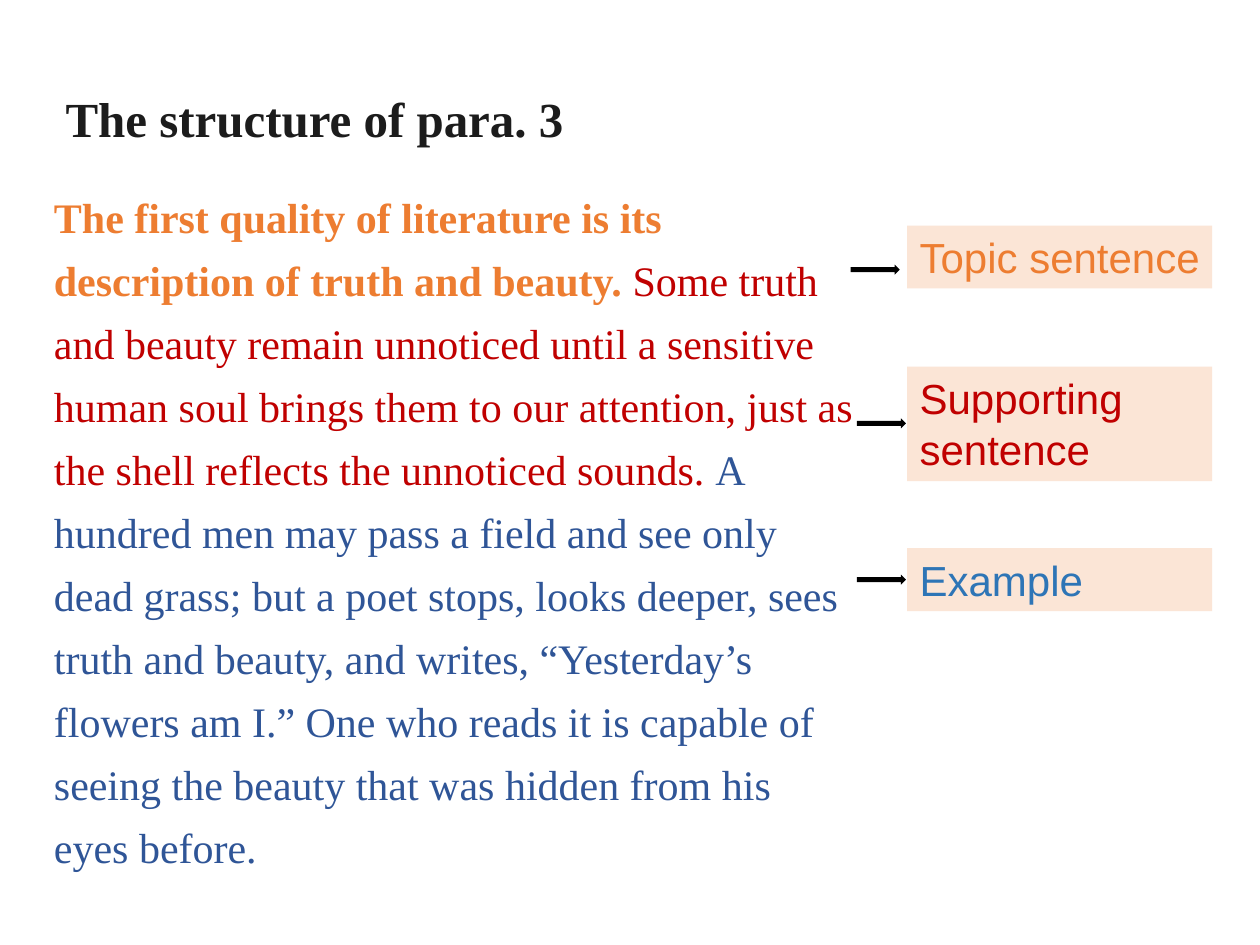
from dataclasses import dataclass

from pptx import Presentation
from pptx.dml.color import RGBColor as Rgb
from pptx.enum.shapes import MSO_SHAPE as Kind
from pptx.enum.text import MSO_ANCHOR as Anchor, PP_ALIGN as Align
from pptx.util import Inches, Pt


@dataclass(frozen=True)
class Theme:
    ink: str = "1C1C1C"
    topic: str = "ED7D31"
    support: str = "C00000"
    example: str = "2F5597"
    label: str = "2E75B6"
    panel: str = "FBE5D6"
    arrow: str = "000000"
    serif: str = "Times New Roman"
    sans: str = "Arial"
    head: int = 28
    body: int = 24


@dataclass(frozen=True)
class Part:
    text: str
    color: str
    bold: bool = False


@dataclass(frozen=True)
class Label:
    text: str
    color: str
    top: float
    height: float
    arrow_left: float
    arrow_top: float
    wrap: bool = True


THEME = Theme()
PARTS = [
    Part("The first quality of literature is its description of truth and "
         "beauty. ", THEME.topic, True),
    Part("Some truth and beauty remain unnoticed until a sensitive human soul "
         "brings them to our attention, just as the shell reflects the "
         "unnoticed sounds. ", THEME.support),
    Part("A hundred men may pass a field and see only dead grass; but a poet "
         "stops, looks deeper, sees truth and beauty, and writes, “Yesterday’s "
         "flowers am I.” One who reads it is capable of seeing the beauty that "
         "was hidden from his eyes before.", THEME.example),
]
LABELS = [
    Label("Topic sentence", THEME.topic, 1.79, 0.5, 6.75, 2.1, False),
    Label("Supporting sentence", THEME.support, 2.91, 0.91, 6.8, 3.32),
    Label("Example", THEME.label, 4.35, 0.5, 6.8, 4.56),
]


def style(run, face: str, size: int, color: str, bold: bool = False) -> None:
    font = run.font
    font.name, font.size, font.bold = face, Pt(size), bold
    font.color.rgb = Rgb.from_string(color)


def add_title(slide, text: str) -> None:
    title = slide.shapes.title
    title.left, title.top = Inches(0.42), Inches(0.65)
    title.width, title.height = Inches(7.97), Inches(0.57)
    frame = title.text_frame
    frame.text = text
    frame.vertical_anchor = Anchor.TOP
    para = frame.paragraphs[0]
    para.alignment = Align.LEFT
    style(para.runs[0], THEME.serif, THEME.head, THEME.ink, True)


def add_body(slide, parts: list[Part]) -> None:
    box = slide.shapes.add_textbox(
        Inches(0.33), Inches(1.37), Inches(6.56), Inches(5.43))
    frame = box.text_frame
    frame.word_wrap = True
    para = frame.paragraphs[0]
    para.line_spacing = 1.25
    for part in parts:
        run = para.add_run()
        run.text = part.text
        style(run, THEME.serif, THEME.body, part.color, part.bold)


def add_block(slide, kind: Kind, left: float, top: float, width: float,
              height: float, fill: str):
    block = slide.shapes.add_shape(
        kind, Inches(left), Inches(top), Inches(width), Inches(height))
    block.shadow.inherit = False
    block.fill.solid()
    block.fill.fore_color.rgb = Rgb.from_string(fill)
    block.line.fill.background()
    return block


def add_label(slide, label: Label) -> None:
    """Draw a label panel and the arrow that leads to it."""
    panel = add_block(slide, Kind.RECTANGLE, 7.2, label.top, 2.42,
                      label.height, THEME.panel)
    frame = panel.text_frame
    frame.text = label.text
    frame.word_wrap = label.wrap
    frame.vertical_anchor = Anchor.TOP
    para = frame.paragraphs[0]
    para.alignment = Align.LEFT
    style(para.runs[0], THEME.sans, THEME.body, label.color)
    add_block(slide, Kind.RIGHT_ARROW, label.arrow_left, label.arrow_top,
              0.39, 0.08, THEME.arrow)


def main() -> None:
    deck = Presentation()
    deck.slide_width, deck.slide_height = Inches(10), Inches(7.5)
    slide = deck.slides.add_slide(deck.slide_layouts[5])
    add_title(slide, "The structure of para. 3")
    add_body(slide, PARTS)
    for label in LABELS:
        add_label(slide, label)
    deck.save("out.pptx")


if __name__ == "__main__":
    main()
